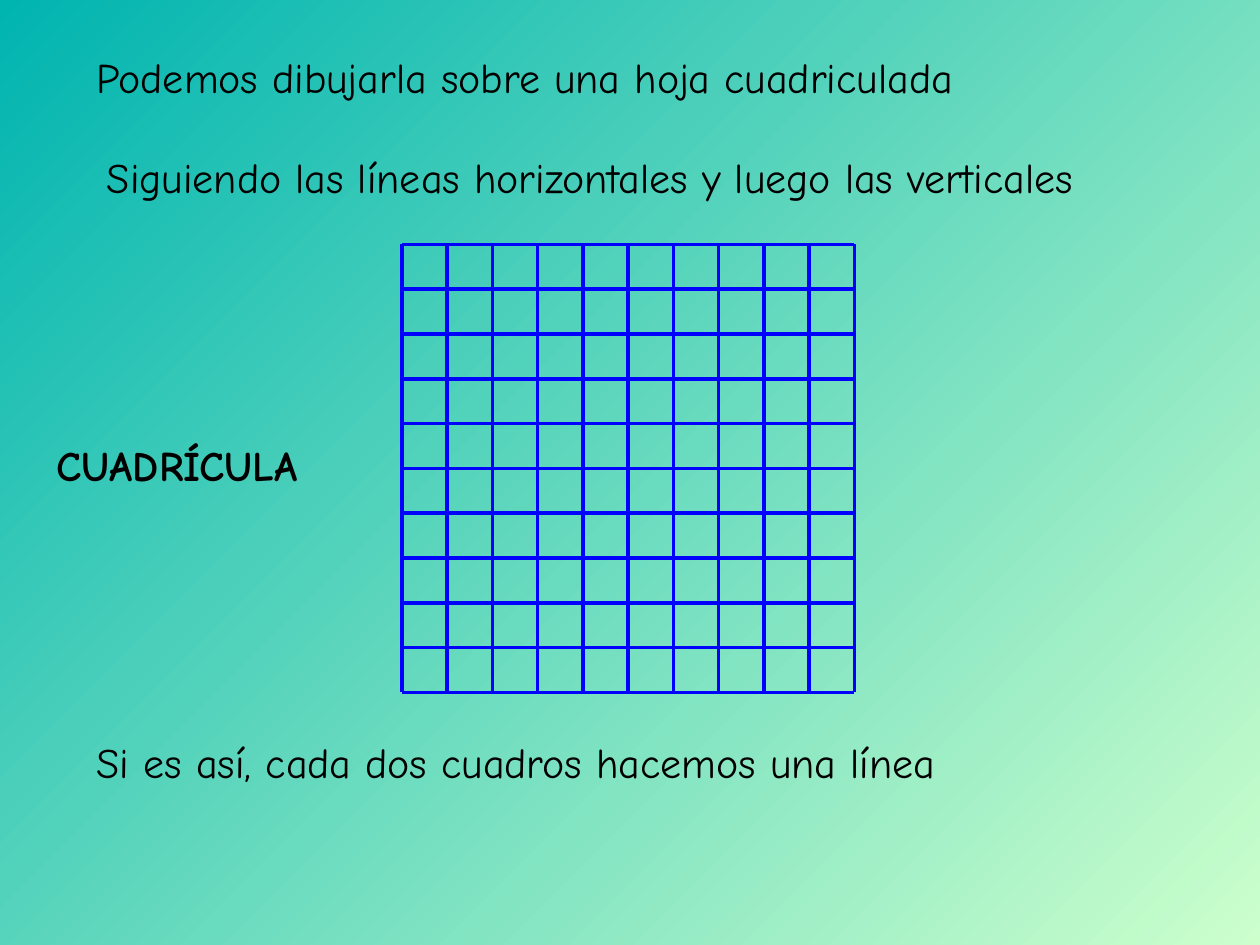
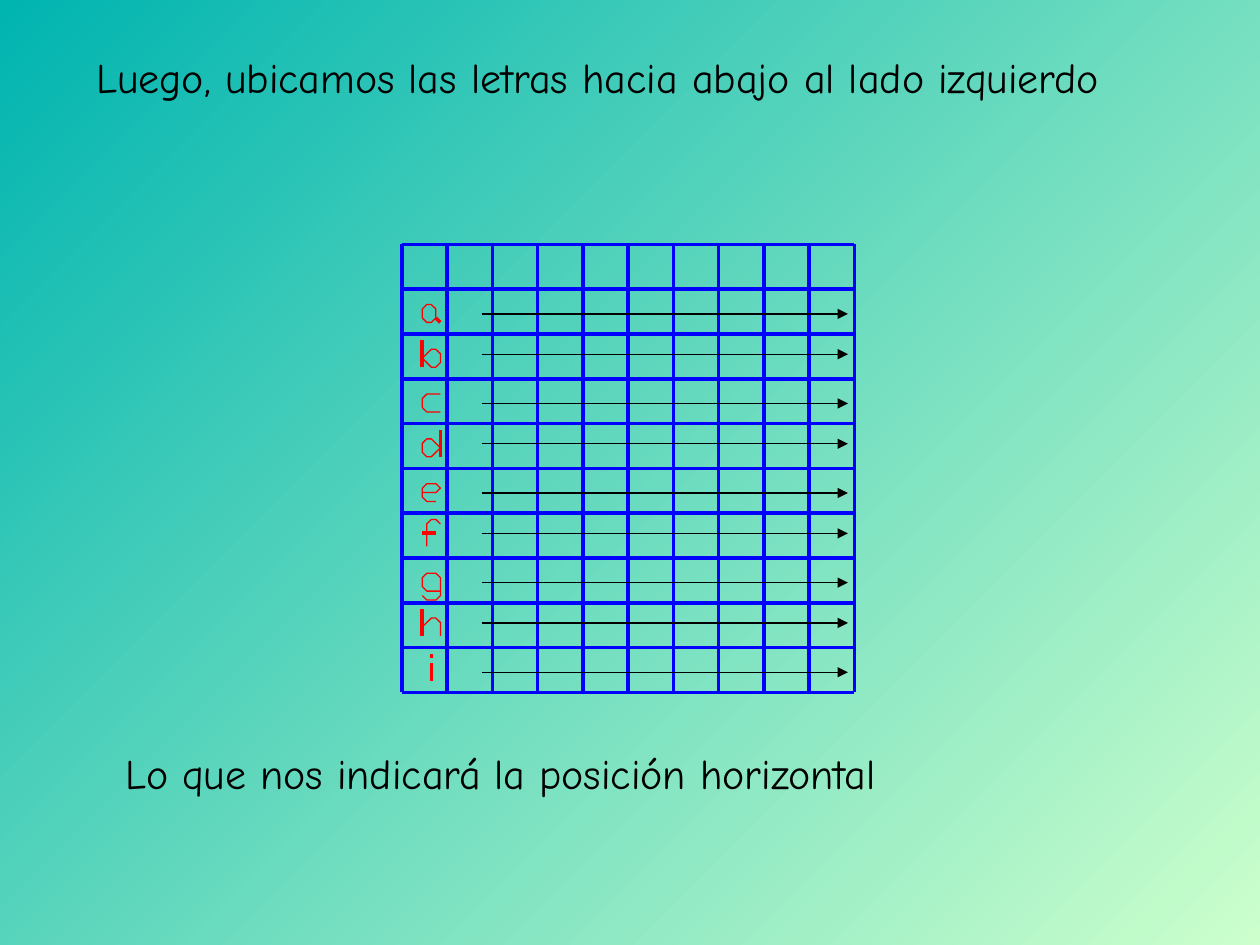
from lxml.etree import SubElement
from pptx import Presentation
from pptx.dml.color import RGBColor
from pptx.enum.dml import MSO_LINE
from pptx.enum.shapes import MSO_CONNECTOR as Connector
from pptx.enum.text import MSO_AUTO_SIZE as AutoSize
from pptx.oxml.ns import qn
from pptx.util import Inches, Pt

BLACK = RGBColor(0x00, 0x00, 0x00)
BLUE = RGBColor(0x00, 0x00, 0xFF)
RED = RGBColor(0xFF, 0x00, 0x00)
TEAL = RGBColor(0x00, 0xB4, 0xB0)
PALE_GREEN = RGBColor(0xCC, 0xFF, 0xCC)
FONT = "Comic Neue"
HAIRLINE = 0

# The sheet: place and size in percent of the slide, and its count of cells
SHEET_LEFT, SHEET_TOP = 31.9, 25.87
SHEET_WIDTH, SHEET_HEIGHT = 35.9, 47.4
CELLS = 10

# Pen strokes of each letter: (right, up) from its baseline, in tenths of a cell
LETTERS = {
    "a": [[(2, 0), (1, 0), (0, 1), (0, 3), (1, 4), (2, 4), (3, 3), (3, 1), (2, 0)],
          [(3, 1), (4, 0)]],
    "b": [[(0, 0), (0, 6)],
          [(0, 2), (2, 4), (3, 4), (4, 3), (4, 1), (3, 0), (2, 0), (0, 2)]],
    "c": [[(4, 4), (1, 4), (0, 3), (0, 1), (1, 0), (4, 0)]],
    "d": [[(4, 2), (2, 0), (1, 0), (0, 1), (0, 3), (1, 4), (2, 4), (4, 2)],
          [(4, 6), (4, 0)]],
    "e": [[(0, 2), (3, 2), (4, 3), (3, 4), (1, 4), (0, 3), (0, 1), (1, 0), (3, 0)]],
    "f": [[(0, 3), (3, 3)],
          [(4, 5), (3, 6), (2, 6), (1, 5), (1, 0)]],
    "g": [[(0, -1), (1, -2), (3, -2), (4, -1), (4, 3), (3, 4), (1, 4), (0, 3),
           (0, 1), (1, 0), (4, 0)]],
    "h": [[(0, 0), (0, 6)],
          [(0, 2), (2, 4), (3, 4), (4, 3), (4, 0)]],
    "i": [[(2, 0), (2, 4)],
          [(2, 5), (2, 6)]],
}


def write(box, text, size=24, bold=False, color=BLACK):
    """Put one formatted paragraph into a text box."""
    span = box.text_frame.paragraphs[0].add_run()
    span.text = text
    font = span.font
    font.name, font.size, font.bold = FONT, Pt(size), bold
    font.color.rgb = color


class Lesson:
    """Holds the deck, its style and the current page."""

    def __init__(self):
        self.deck = Presentation()
        self.deck.slide_width, self.deck.slide_height = Inches(10), Inches(7.5)
        self.page = None
        self.paint_background()

    def paint_background(self):
        fill = self.deck.slide_master.background.fill
        fill.gradient()
        fill.gradient_angle = 315
        for stop, color in zip(fill.gradient_stops, (TEAL, PALE_GREEN)):
            stop.color.rgb = color

    def new_page(self):
        self.page = self.deck.slides.add_slide(self.deck.slide_layouts[6])

    def place(self, across, down):
        """Turn percents of the slide into lengths."""
        return (round(self.deck.slide_width * across / 100),
                round(self.deck.slide_height * down / 100))

    def cell(self, column, row):
        """Turn a column and row of the sheet into a point."""
        return self.place(SHEET_LEFT + SHEET_WIDTH * column / CELLS,
                          SHEET_TOP + SHEET_HEIGHT * row / CELLS)

    def caption(self, text, left, top, width=87.4, **style):
        box = self.page.shapes.add_textbox(*self.place(left, top),
                                           *self.place(width, 6.67))
        box.text_frame.word_wrap = True
        box.text_frame.auto_size = AutoSize.SHAPE_TO_FIT_TEXT
        write(box, text, **style)

    def line(self, start, end, color=BLUE, width=HAIRLINE, arrow=False):
        line = self.page.shapes.add_connector(
            Connector.STRAIGHT, *self.cell(*start), *self.cell(*end))
        line.line.color.rgb = color
        line.line.width = Pt(width)
        if arrow:
            SubElement(line.line._get_or_add_ln(), qn("a:tailEnd"), type="triangle")
        SubElement(line._element.spPr, qn("a:effectLst"))

    def outline(self, points, color=RED):
        start, *others = [self.cell(*point) for point in points]
        builder = self.page.shapes.build_freeform(*start)
        builder.add_line_segments(others, close=False)
        shape = builder.convert_to_shape()
        shape.shadow.inherit = False
        shape.fill.background()
        shape.line.color.rgb = color
        shape.line.width = Pt(HAIRLINE)

    def sheet(self):
        for step in range(CELLS + 1):
            self.line((step, 0), (step, CELLS))
            self.line((0, step), (CELLS, step))

    def letter(self, strokes, baseline):
        for stroke in strokes:
            points = [(0.45 + right / 10, baseline - up / 10) for right, up in stroke]
            if len(points) == 2:
                self.line(*points, color=RED)
            else:
                self.outline(points)

    def arrow(self, row):
        self.line((1.76, row), (9.86, row), color=BLACK, width=0.75, arrow=True)


def main():
    lesson = Lesson()

    # The squared sheet
    lesson.new_page()
    lesson.sheet()
    lesson.caption("Podemos dibujarla sobre una hoja cuadriculada", 6.7, 4.8)
    lesson.caption("Siguiendo las líneas horizontales y luego las verticales", 7.5, 15.33)
    lesson.caption("Si es así, cada dos cuadros hacemos una línea", 6.7, 77.33)
    lesson.caption("CUADRÍCULA", 3.5, 45.87, width=26, bold=True)

    # Letters down the left side, each with its arrow
    lesson.new_page()
    lesson.sheet()
    for row, strokes in enumerate(LETTERS.values(), start=1):
        lesson.letter(strokes, baseline=row + 0.74)
    for row in range(1, CELLS):
        lesson.arrow(row + (0.55 if row % 2 else 0.45))
    lesson.caption("Luego, ubicamos las letras hacia abajo al lado izquierdo", 6.7, 4.8)
    lesson.caption("Lo que nos indicará la posición horizontal", 9, 78.4)

    lesson.deck.save("out.pptx")


if __name__ == "__main__":
    main()
